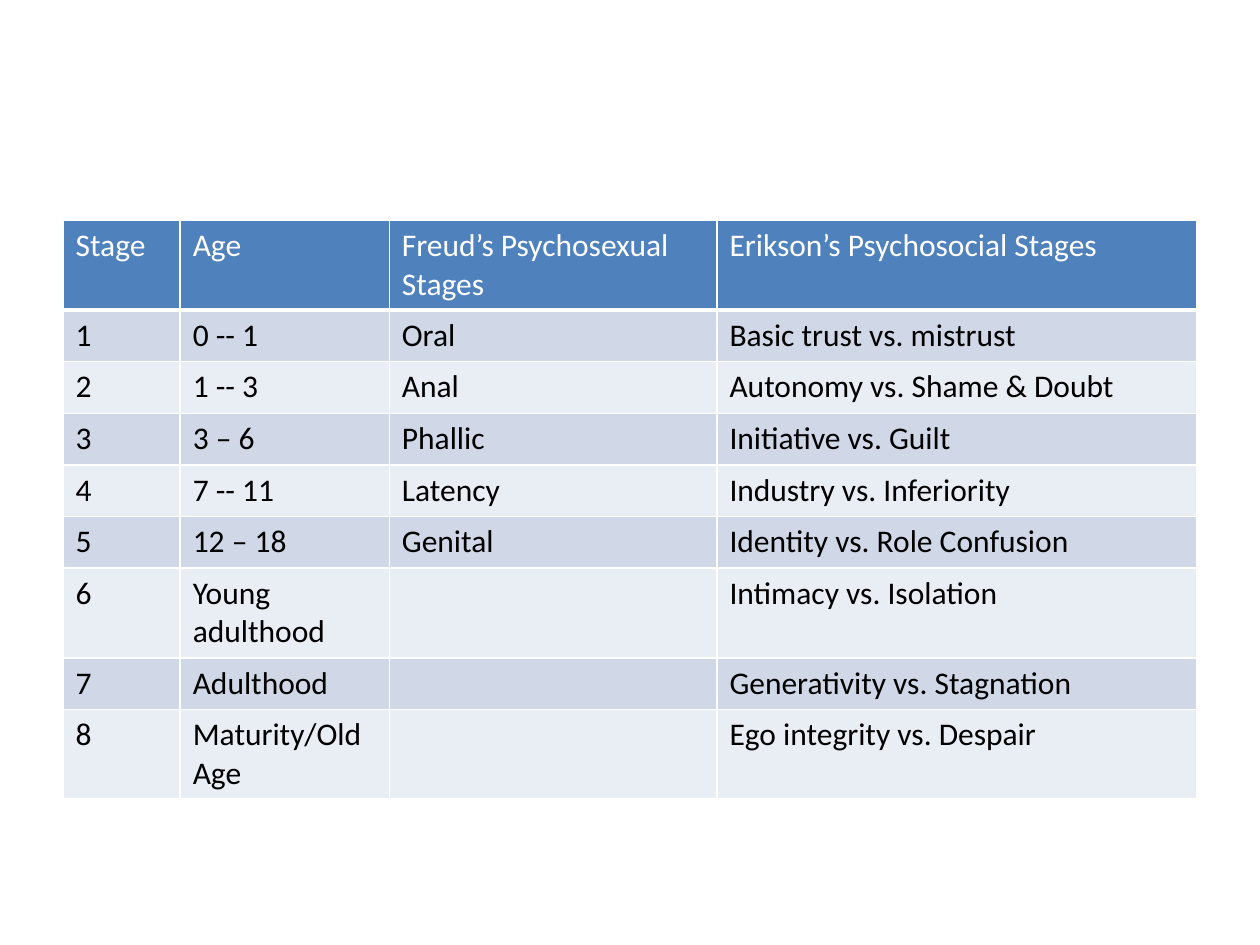
"""Build a slide comparing Freud's and Erikson's stages of development."""

from typing import NamedTuple

from lxml.etree import SubElement
from pptx import Presentation
from pptx.dml.color import RGBColor
from pptx.oxml.ns import qn
from pptx.table import _Cell
from pptx.util import Inches, Pt


class Stage(NamedTuple):
    number: str
    age: str
    freud: str
    erikson: str


class RowStyle(NamedTuple):
    fill: str
    text: str
    bottom_width: float


HEADINGS = Stage("Stage", "Age", "Freud’s Psychosexual Stages", "Erikson’s Psychosocial Stages")
STAGES = [
    Stage("1", "0 -- 1", "Oral", "Basic trust vs. mistrust"),
    Stage("2", "1 -- 3", "Anal", "Autonomy vs. Shame & Doubt"),
    Stage("3", "3 – 6", "Phallic", "Initiative vs. Guilt"),
    Stage("4", "7 -- 11", "Latency", "Industry vs. Inferiority"),
    Stage("5", "12 – 18", "Genital", "Identity vs. Role Confusion"),
    Stage("6", "Young adulthood", "", "Intimacy vs. Isolation"),
    Stage("7", "Adulthood", "", "Generativity vs. Stagnation"),
    Stage("8", "Maturity/Old Age", "", "Ego integrity vs. Despair"),
]
HEADER_STYLE = RowStyle("4F81BD", "FFFFFF", 3)
BAND_STYLES = [RowStyle("D0D8E8", "000000", 1), RowStyle("E9EDF4", "000000", 1)]
COLUMN_WIDTHS = [0.93, 1.66, 2.6, 3.81]
ROW_HEIGHT = 0.41


def color(value: str) -> RGBColor:
    return RGBColor.from_string(value)


def set_borders(cell: _Cell, bottom_width: float, line_color: str = "FFFFFF") -> None:
    properties = cell._tc.get_or_add_tcPr()
    for tag, width in (("a:lnL", 1), ("a:lnR", 1), ("a:lnT", 1), ("a:lnB", bottom_width)):
        line = SubElement(properties, qn(tag), w=str(Pt(width)))
        SubElement(SubElement(line, qn("a:solidFill")), qn("a:srgbClr"), val=line_color)


def write_text(cell: _Cell, text: str, *, text_color: str, size: float = 18,
               font: str = "Calibri", bold: bool = False) -> None:
    paragraph = cell.text_frame.paragraphs[0]
    paragraph.font.size = Pt(size)
    if text:
        run = paragraph.add_run()
        run.text = text
        run.font.name = font
        run.font.size = Pt(size)
        run.font.bold = bold
        run.font.color.rgb = color(text_color)


def format_cell(cell: _Cell, text: str, style: RowStyle) -> None:
    set_borders(cell, style.bottom_width)
    cell.fill.solid()
    cell.fill.fore_color.rgb = color(style.fill)
    write_text(cell, text, text_color=style.text)


def main() -> None:
    presentation = Presentation()
    presentation.slide_width = Inches(10)
    presentation.slide_height = Inches(7.5)
    slide = presentation.slides.add_slide(presentation.slide_layouts[6])

    rows = [HEADINGS, *STAGES]
    table = slide.shapes.add_table(
        len(rows), len(COLUMN_WIDTHS), Inches(0.5), Inches(1.75),
        Inches(sum(COLUMN_WIDTHS)), Inches(ROW_HEIGHT * len(rows)),
    ).table
    for column, width in zip(table.columns, COLUMN_WIDTHS):
        column.width = Inches(width)
    for index, (row, stage) in enumerate(zip(table.rows, rows)):
        row.height = Inches(ROW_HEIGHT)
        style = BAND_STYLES[(index - 1) % 2] if index else HEADER_STYLE
        for cell, text in zip(row.cells, stage):
            format_cell(cell, text, style)

    presentation.save("out.pptx")


if __name__ == "__main__":
    main()
